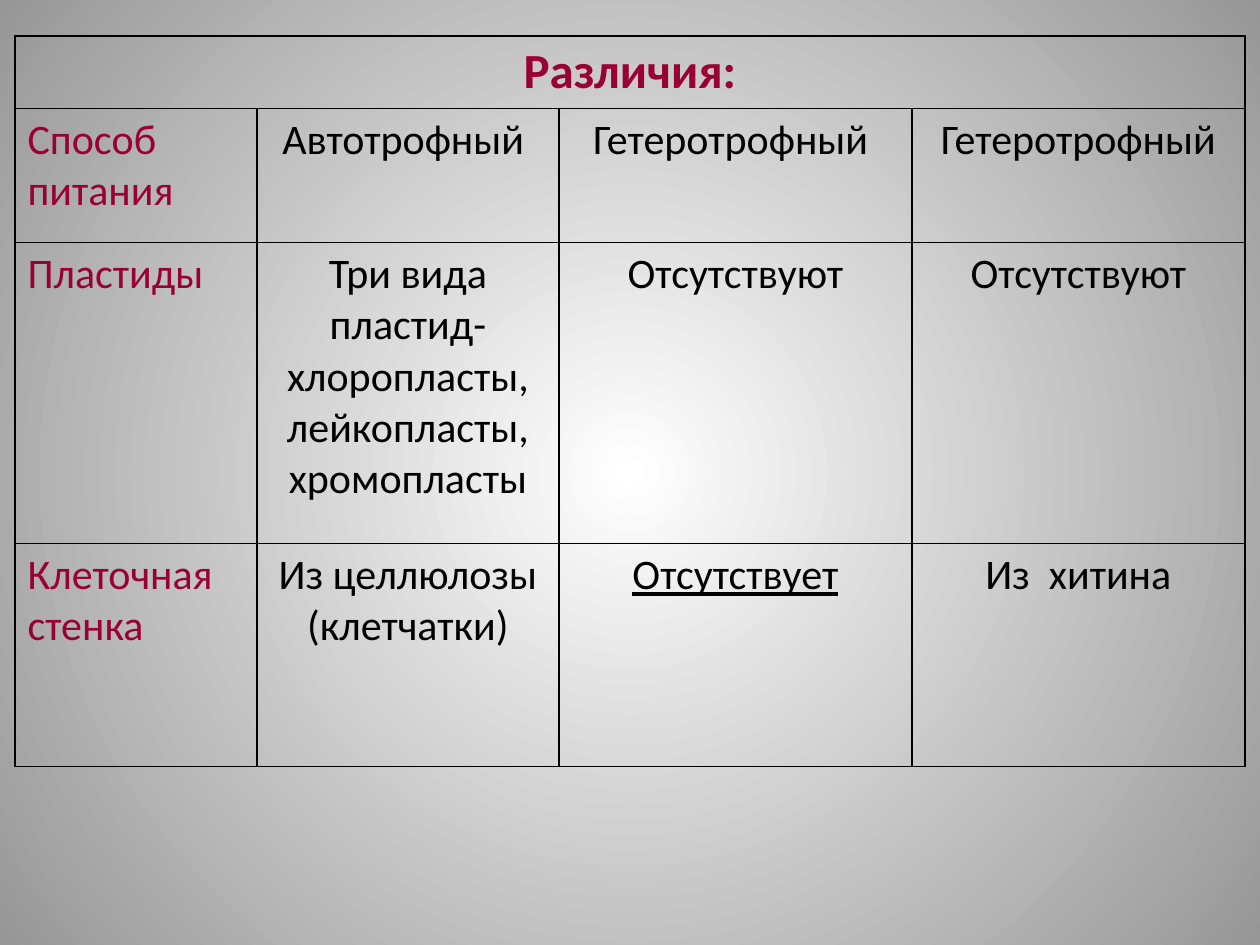
from pptx import Presentation as Deck
from pptx.dml.color import RGBColor as Rgb
from pptx.enum.text import PP_ALIGN as Align
from pptx.oxml import parse_xml as to_xml
from pptx.oxml.ns import nsdecls as decls, qn
from pptx.util import Pt

SCALE = 914400 // 126
COLORS = {"ink": "000000", "head": "990033", "core": "FFFFFF", "edge": "979797"}
COLS = [242, 302, 353, 333]
ROWS = [72, 134, 301, 223]
TRAITS = [
    ["Способ питания", "Автотрофный ", "Гетеротрофный ", "Гетеротрофный"],
    ["Пластиды", "Три вида пластид- хлоропласты, лейкопласты, хромопласты",
     "Отсутствуют", "Отсутствуют"],
    ["Клеточная стенка", "Из целлюлозы (клетчатки)", "Отсутствует", "Из  хитина"],
]


class Painter:
    def __init__(self, deck, face="Calibri"):
        self.slide = deck.slides.add_slide(deck.slide_layouts[6])
        self.face = face

    def backdrop(self, core, edge):
        fill = self.slide.background.fill
        fill.gradient()
        for stop, name in zip(fill.gradient_stops, (core, edge)):
            stop.color.rgb = Rgb.from_string(COLORS[name])
        grad = self.slide.element.find(".//" + qn("a:gradFill"))
        grad.replace(grad.find(qn("a:lin")), to_xml(
            f'<a:path {decls("a")} path="circle">'
            '<a:fillToRect l="50000" t="50000" r="50000" b="50000"/></a:path>'))

    def table(self, left, top, cols, rows):
        box = [n * SCALE for n in (left, top, sum(cols), sum(rows))]
        table = self.slide.shapes.add_table(len(rows), len(cols), *box).table
        table.first_row = table.horz_banding = False
        for col, width in zip(table.columns, cols):
            col.width = width * SCALE
        for row, height in zip(table.rows, rows):
            row.height = height * SCALE
        for cell in table.iter_cells():
            self.border(cell)
            cell.fill.background()
        return table

    def border(self, cell):
        props = cell._tc.get_or_add_tcPr()
        for side in "LRTB":
            props.append(to_xml(
                f'<a:ln{side} {decls("a")} w="12700"><a:solidFill>'
                f'<a:srgbClr val="{COLORS["ink"]}"/></a:solidFill></a:ln{side}>'))

    def label(self, cell, text, color="ink", size=24, align=Align.CENTER, bold=False):
        cell.text = text
        para = cell.text_frame.paragraphs[0]
        para.alignment = align
        font = para.font
        font.name, font.size, font.bold = self.face, Pt(size), bold
        font.color.rgb = Rgb.from_string(COLORS[color])
        return para


def main():
    deck = Deck()
    deck.slide_width, deck.slide_height = 1260 * SCALE, 945 * SCALE
    art = Painter(deck)
    art.backdrop("core", "edge")
    table = art.table(15, 36, COLS, ROWS)
    title = table.cell(0, 0)
    title.merge(table.cell(0, len(COLS) - 1))
    art.label(title, "Различия:", "head", 28, bold=True)
    for r, (trait, *values) in enumerate(TRAITS, 1):
        art.label(table.cell(r, 0), trait, "head", align=Align.LEFT)
        for c, value in enumerate(values, 1):
            para = art.label(table.cell(r, c), value)
            if value == "Отсутствует":
                para.font.underline = True
    deck.save("out.pptx")


if __name__ == "__main__":
    main()
